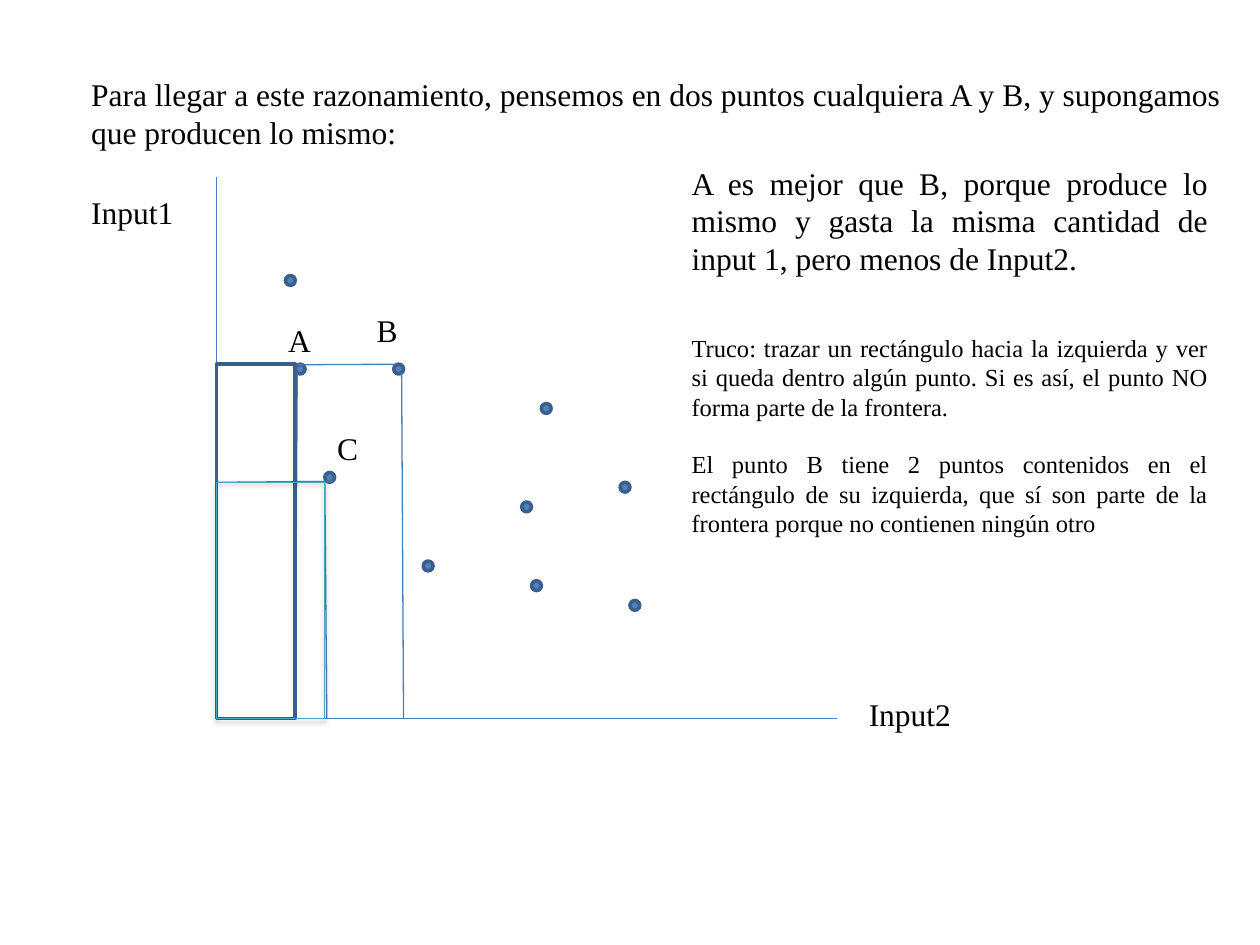
from dataclasses import dataclass

from lxml import etree
from pptx import Presentation
from pptx import util as u
from pptx.dml.color import RGBColor
from pptx.enum import shapes, text
from pptx.oxml import ns


@dataclass(frozen=True)
class Theme:
    font: str = "Times New Roman"
    ink: str = "000000"
    axis: str = "4B7EBC"
    dot: str = "4F81BD"
    border: str = "3A5F8C"
    teal: str = "46AAC5"
    body: int = 18
    note: int = 14
    thin: float = 0.75
    thick: float = 2


THEME = Theme()
WIDTH, HEIGHT = u.Inches(10), u.Inches(7.5)
COLUMNS, ROWS = 128, 96

ORIGIN = (22, 73)
AXIS_ENDS = [(22, 18), (85, 73)]

POINTS = [(29, 28), (30, 37), (40, 37), (33, 48), (43, 57),
          (53, 51), (54, 59), (64, 61), (55, 41), (63, 49)]

GUIDES = [
    ((22, 37.1), (40.2, 37)),
    ((40.8, 37.9), (41, 73)),
    ((30.2, 37.9), (30, 73)),
    ((33.8, 48.9), (22, 49)),
    ((33, 48.9), (33.2, 73)),
]

LABELS = [
    ("Input1", 8, 19, 13),
    ("Input2", 87, 70, 13),
    ("A", 28, 32, 7),
    ("B", 37, 31, 7),
    ("C", 33, 43, 9),
]

INTRO = ("Para llegar a este razonamiento, pensemos en dos puntos cualquiera "
         "A y B, y supongamos que producen lo mismo:")
COMPARISON = ("A es mejor que B, porque produce lo mismo y gasta la misma "
              "cantidad de input 1, pero menos de Input2.")
TRICK = ("Truco: trazar un rectángulo hacia la izquierda y ver si queda dentro "
         "algún punto. Si es así, el punto NO forma parte de la frontera.")
CONCLUSION = ("El punto B tiene 2 puntos contenidos en el rectángulo de su "
              "izquierda, que sí son parte de la frontera porque no contienen "
              "ningún otro")


def x(column):
    return round(WIDTH * column / COLUMNS)


def y(row):
    return round(HEIGHT * row / ROWS)


def set_line(line, color, width):
    line.color.rgb = RGBColor.from_string(color)
    line.width = u.Pt(width)


def add_line(slide, start, end):
    line = slide.shapes.add_connector(
        shapes.MSO_CONNECTOR.STRAIGHT,
        x(start[0]), y(start[1]), x(end[0]), y(end[1]))
    set_line(line.line, THEME.axis, THEME.thin)
    etree.SubElement(line._element.spPr, ns.qn("a:effectLst"))


def add_outline(slide, kind, column, row, columns, rows, color, width, fill=None):
    outline = slide.shapes.add_shape(
        kind, x(column), y(row), x(columns), y(rows))
    outline.shadow.inherit = False
    if fill:
        outline.fill.solid()
        outline.fill.fore_color.rgb = RGBColor.from_string(fill)
    else:
        outline.fill.background()
    set_line(outline.line, color, width)
    return outline


def add_dot(slide, column, row):
    add_outline(slide, shapes.MSO_SHAPE.OVAL, column, row, 1, 1,
                THEME.border, THEME.thick, THEME.dot)


def add_area(slide, column, row, color, width):
    """Rectangle from the origin up to the given corner."""
    left, base = ORIGIN
    return add_outline(slide, shapes.MSO_SHAPE.RECTANGLE, left, row,
                       column - left, base - row, color, width)


def cast_shadow(shape):
    effects = shape._element.spPr.find(ns.qn("a:effectLst"))
    shadow = etree.SubElement(
        effects, ns.qn("a:outerShdw"), blurRad=str(u.Pt(3.1)),
        dist=str(u.Pt(1.6)), dir="5400000", rotWithShape="0")
    color = etree.SubElement(shadow, ns.qn("a:srgbClr"), val=THEME.ink)
    etree.SubElement(color, ns.qn("a:alpha"), val="38000")


def add_text_box(slide, column, row, columns, rows):
    frame = slide.shapes.add_textbox(
        x(column), y(row), x(columns), y(rows)).text_frame
    frame.word_wrap = True
    frame.auto_size = text.MSO_AUTO_SIZE.SHAPE_TO_FIT_TEXT
    return frame


def write(paragraph, words, size=THEME.body, align=text.PP_ALIGN.LEFT, before=0):
    paragraph.alignment = align
    paragraph.space_before = u.Pt(before)
    run = paragraph.add_run()
    run.text = words
    run.font.name = THEME.font
    run.font.size = u.Pt(size)
    run.font.color.rgb = RGBColor.from_string(THEME.ink)


def add_explanation(slide):
    frame = add_text_box(slide, 69, 16, 55, 40)
    justify = text.PP_ALIGN.JUSTIFY
    write(frame.paragraphs[0], COMPARISON, align=justify)
    for words, gap in [(TRICK, 32), (CONCLUSION, 16)]:
        write(frame.add_paragraph(), words, size=THEME.note,
              align=justify, before=gap)


def main():
    deck = Presentation()
    deck.slide_width, deck.slide_height = WIDTH, HEIGHT
    slide = deck.slides.add_slide(deck.slide_layouts[6])

    for end in AXIS_ENDS:
        add_line(slide, ORIGIN, end)
    for point in POINTS:
        add_dot(slide, *point)

    write(add_text_box(slide, 8, 7, 118, 9).paragraphs[0], INTRO)
    for words, column, row, columns in LABELS:
        write(add_text_box(slide, column, row, columns, 5).paragraphs[0], words)
    add_explanation(slide)

    for start, end in GUIDES:
        add_line(slide, start, end)
    add_area(slide, 30, 37, THEME.border, THEME.thick)
    cast_shadow(add_area(slide, 33, 49, THEME.teal, THEME.thin))

    deck.save("out.pptx")


if __name__ == "__main__":
    main()
